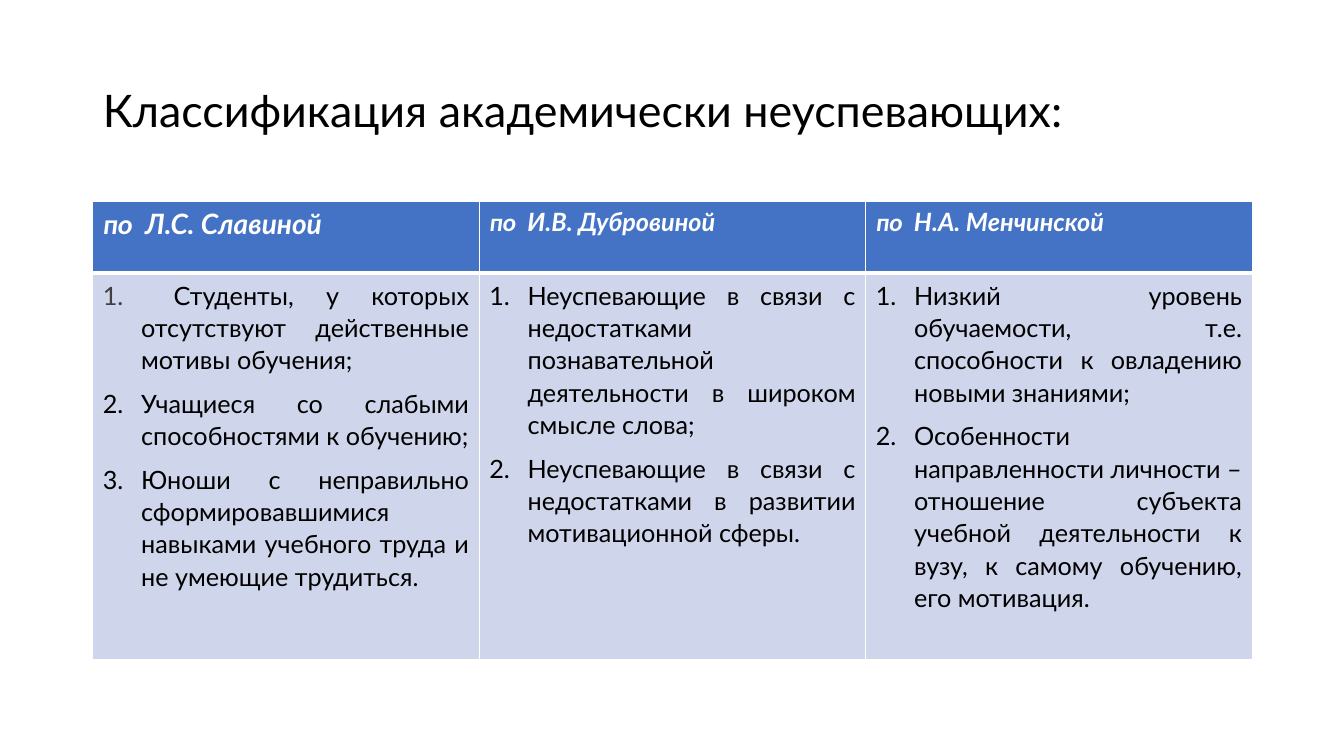
from lxml import etree
from pptx import Presentation
from pptx import util as u
from pptx.dml.color import RGBColor
from pptx.enum import text
from pptx.oxml import ns

HEADS = [
    ("Л.С. Славиной", 20),
    ("И.В. Дубровиной ", 18),
    ("Н.А. Менчинской", 18),
]
LISTS = [
    [
        "Студенты, у которых отсутствуют действенные мотивы обучения;",
        "Учащиеся со слабыми способностями к обучению;",
        "Юноши с неправильно сформировавшимися навыками учебного труда и не умеющие трудиться.",
    ],
    [
        "Неуспевающие в связи с недостатками познавательной деятельности в широком смысле слова;",
        "Неуспевающие в связи с недостатками в развитии мотивационной сферы.",
    ],
    [
        "Низкий уровень обучаемости, т.е. способности к овладению новыми знаниями;",
        "Особенности направленности личности – отношение субъекта учебной деятельности к вузу, "
        "к самому обучению, его мотивация.",
    ],
]


def color(code):
    return RGBColor.from_string(code)


def add_run(para, words, size, code, face="Lato", strong=False):
    run = para.add_run()
    run.text = words
    font = run.font
    font.name = face
    font.size = u.Pt(size)
    font.bold = font.italic = strong
    font.color.rgb = color(code)


def add_node(parent, tag, **attrs):
    return etree.SubElement(parent, ns.qn(tag), attrs)


def paint(cell, code, base):
    cell.fill.solid()
    cell.fill.fore_color.rgb = color(code)
    props = cell._tc.get_or_add_tcPr()
    widths = [("a:lnL", 1), ("a:lnR", 1), ("a:lnT", 1), ("a:lnB", base)]
    for spot, (tag, width) in enumerate(widths):
        line = add_node(props, tag, w=str(u.Pt(width)))
        fill = add_node(line, "a:solidFill")
        add_node(fill, "a:srgbClr", val="FFFFFF")
        props.insert(spot, line)


def number(para):
    para.alignment = text.PP_ALIGN.JUSTIFY
    para.line_spacing = 1.07
    para.space_after = u.Pt(8)
    props = para._p.get_or_add_pPr()
    indent = u.Inches(0.38)
    props.set("marL", str(indent))
    props.set("indent", str(-indent))
    add_node(props, "a:buAutoNum", type="arabicPeriod")
    tabs = add_node(props, "a:tabLst")
    add_node(tabs, "a:tab", pos=str(u.Inches(0.5)), algn="l")


def add_title(slide):
    title = slide.shapes.title
    title.left, title.top = u.Inches(0.92), u.Inches(0.4)
    title.width, title.height = u.Inches(11.5), u.Inches(1.45)
    frame = title.text_frame
    frame.vertical_anchor = text.MSO_ANCHOR.MIDDLE
    para = frame.paragraphs[0]
    para.alignment = text.PP_ALIGN.LEFT
    para.line_spacing = 0.9
    add_run(para, "Классификация академически неуспевающих:", 32, "000000")


def fill_head(cell, name, size):
    paint(cell, "4472C4", 3)
    para = cell.text_frame.paragraphs[0]
    add_run(para, "по  ", size, "FFFFFF", "Calibri", True)
    add_run(para, name, size, "FFFFFF", strong=True)


def fill_list(cell, items, first):
    paint(cell, "CFD5EA", 1)
    frame = cell.text_frame
    for spot, item in enumerate(items):
        para = frame.add_paragraph() if spot else frame.paragraphs[0]
        number(para)
        if first and spot == 0:
            add_run(para, " ", 18, "404040")
        add_run(para, item, 18, "000000")


def add_grid(slide):
    grid = slide.shapes.add_table(
        2, len(HEADS), u.Inches(0.92), u.Inches(2), u.Inches(11.5), u.Inches(4.54)
    ).table
    grid.horz_banding = False
    grid.rows[0].height = u.Inches(0.71)
    grid.rows[1].height = u.Inches(3.83)
    for col, ((name, size), items) in enumerate(zip(HEADS, LISTS)):
        fill_head(grid.cell(0, col), name, size)
        fill_list(grid.cell(1, col), items, col == 0)


def main():
    deck = Presentation()
    deck.slide_width, deck.slide_height = u.Inches(13.33), u.Inches(7.5)
    slide = deck.slides.add_slide(deck.slide_layouts[5])
    add_title(slide)
    add_grid(slide)
    deck.save("out.pptx")


main()
